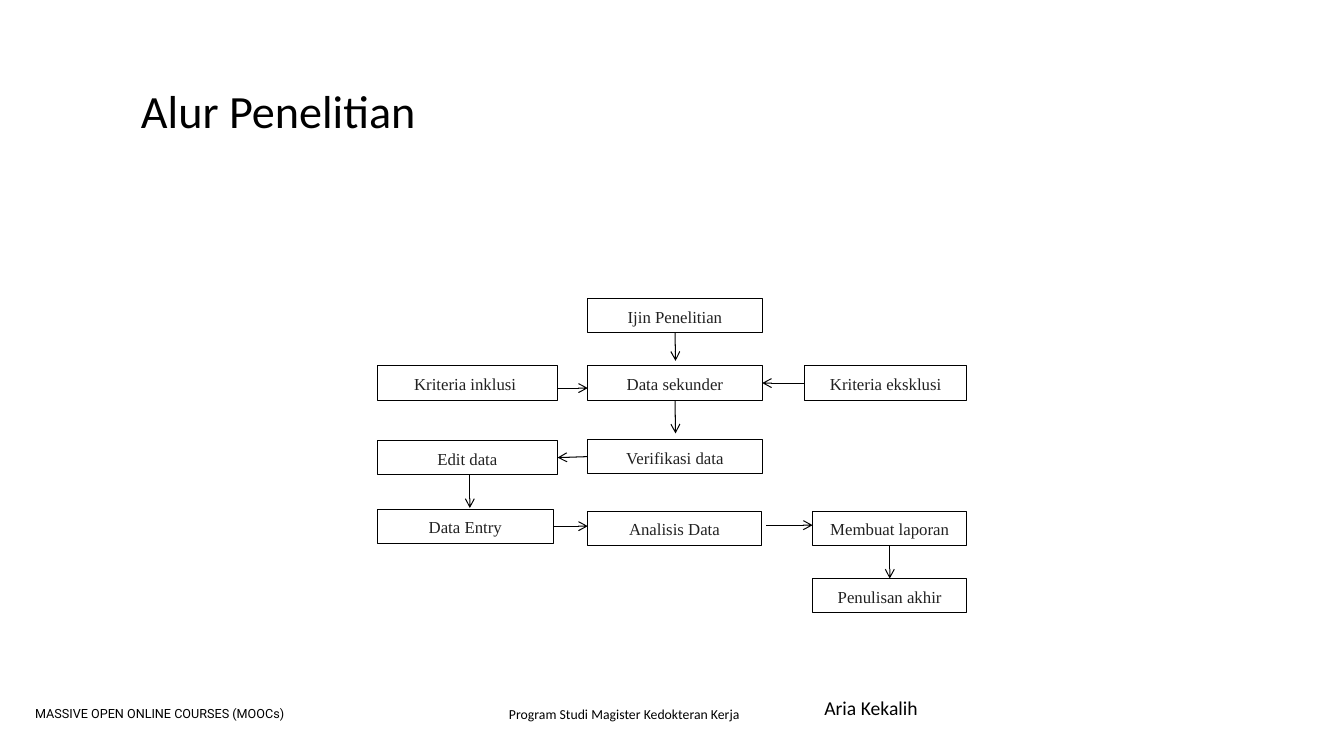
from lxml import etree
from pptx import Presentation
from pptx.dml.color import RGBColor
from pptx.enum import shapes, text
from pptx.oxml.ns import qn
from pptx.util import Inches, Pt

BLACK = RGBColor(0, 0, 0)
WHITE = RGBColor(255, 255, 255)
GREY = RGBColor(0x21, 0x21, 0x21)
TOP, LEFT, BOTTOM, RIGHT = range(4)

prs = Presentation()
prs.slide_width, prs.slide_height = Inches(13.33), Inches(7.5)
slide = prs.slides.add_slide(prs.slide_layouts[6])


def write(shape, words, size, font, color, align, anchor):
    frame = shape.text_frame
    frame.word_wrap = True
    frame.vertical_anchor = anchor
    para = frame.paragraphs[0]
    para.alignment = align
    run = para.add_run()
    run.text = words
    run.font.size, run.font.name = Pt(size), font
    run.font.color.rgb = color
    return para


def add_box(x, y, w, h, edge, width):
    box = slide.shapes.add_shape(shapes.MSO_SHAPE.RECTANGLE,
                                 Inches(x), Inches(y), Inches(w), Inches(h))
    box.shadow.inherit = False
    box.fill.solid()
    box.fill.fore_color.rgb = WHITE
    box.line.color.rgb = edge
    box.line.width = Pt(width)
    return box


# Title and footer texts
labels = [
    ("Program Studi Magister Kedokteran Kerja", 4.95, 6.95, 8.14, 0.27, 9.8, "Calibri", text.MSO_ANCHOR.TOP),
    ("MASSIVE OPEN ONLINE COURSES (MOOCs)", 0.25, 6.95, 5.7, 0.25, 9, "Roboto", text.MSO_ANCHOR.TOP),
    ("Alur Penelitian", 1.3, 0.4, 11.12, 1.45, 33, "Calibri", text.MSO_ANCHOR.MIDDLE),
]
for words, x, y, w, h, size, font, anchor in labels:
    label = slide.shapes.add_textbox(Inches(x), Inches(y), Inches(w), Inches(h))
    para = write(label, words, size, font, BLACK, text.PP_ALIGN.LEFT, anchor)
para.line_spacing = 0.9

# Author
author = add_box(7.72, 6.9, 1.84, 0.25, WHITE, 1)
write(author, "Aria Kekalih", 14, "Calibri", BLACK,
      text.PP_ALIGN.CENTER, text.MSO_ANCHOR.MIDDLE)

# Steps of the flow: words, left, top, width
steps = {
    "permit": ("Ijin Penelitian", 5.83, 2.96, 1.73),
    "source": ("Data sekunder", 5.83, 3.63, 1.73),
    "exclude": ("Kriteria eksklusi", 7.98, 3.63, 1.61),
    "include": ("Kriteria inklusi ", 3.74, 3.63, 1.79),
    "verify": ("Verifikasi data", 5.83, 4.36, 1.73),
    "edit": ("Edit data", 3.74, 4.37, 1.79),
    "entry": ("Data Entry", 3.74, 5.05, 1.75),
    "study": ("Analisis Data", 5.83, 5.07, 1.72),
    "report": ("Membuat laporan", 8.06, 5.07, 1.53),
    "final": ("Penulisan akhir", 8.06, 5.74, 1.53),
}
boxes = {}
for key, (words, x, y, w) in steps.items():
    boxes[key] = add_box(x, y, w, 0.34, BLACK, 0.5)
    para = write(boxes[key], words, 12, "Times New Roman", GREY,
                 text.PP_ALIGN.CENTER, text.MSO_ANCHOR.TOP)
    para.line_spacing = 1.15
    para.space_after = Pt(10)

# Arrows: ends, then the box sides they join
arrows = [
    (6.7, 3.3, 6.7, 3.58, ("permit", BOTTOM), None),
    (6.7, 3.97, 6.7, 4.3, ("source", BOTTOM), None),
    (5.53, 3.85, 5.83, 3.85, None, None),
    (7.98, 3.8, 7.56, 3.8, ("exclude", LEFT), ("source", RIGHT)),
    (5.83, 4.53, 5.53, 4.54, ("verify", LEFT), ("edit", RIGHT)),
    (4.66, 4.71, 4.66, 5.04, None, None),
    (5.49, 5.22, 5.83, 5.22, ("entry", RIGHT), None),
    (7.6, 5.21, 8.06, 5.21, None, None),
    (8.83, 5.41, 8.83, 5.74, ("report", BOTTOM), ("final", TOP)),
]
for x1, y1, x2, y2, start, end in arrows:
    arrow = slide.shapes.add_connector(shapes.MSO_CONNECTOR.STRAIGHT,
                                       Inches(x1), Inches(y1), Inches(x2), Inches(y2))
    if start:
        arrow.begin_connect(boxes[start[0]], start[1])
    if end:
        arrow.end_connect(boxes[end[0]], end[1])
    arrow.line.color.rgb = BLACK
    arrow.line.width = Pt(0.75)
    props = arrow.line._get_or_add_ln()
    etree.SubElement(props, qn("a:tailEnd"), type="arrow")
    etree.SubElement(props.getparent(), qn("a:effectLst"))

prs.save("out.pptx")
